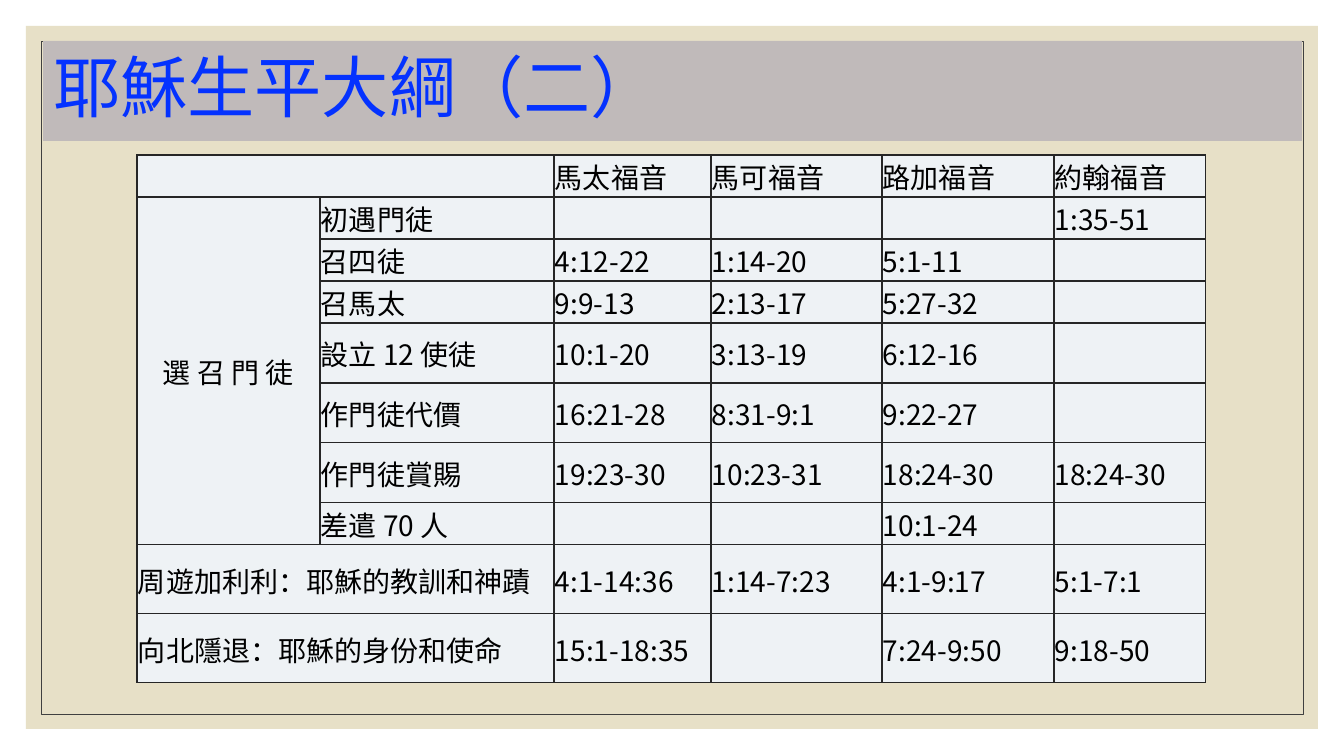
from lxml import etree
from pptx import Presentation
from pptx import util as u
from pptx.dml.color import RGBColor
from pptx.enum import shapes, text
from pptx.oxml import ns

PX = 914400 / 100.8
FONT = "Noto Sans CJK SC"
SAND = RGBColor(0xE7, 0xE0, 0xC7)
FRAME = RGBColor(0x40, 0x40, 0x40)
BAND = RGBColor(0xC0, 0xBA, 0xBA)
BLUE = RGBColor(0x04, 0x32, 0xFF)
CELL = RGBColor(0xEE, 0xF2, 0xF5)
GRID = RGBColor(0x26, 0x26, 0x26)
BLACK = RGBColor(0, 0, 0)

COLUMNS = [183, 234, 157, 171, 172, 152]
ROWS = [42] * 4 + [60] * 3 + [42] + [69] * 2
OUTLINE = [
    ["", "", "馬太福音", "馬可福音", "路加福音", "約翰福音"],
    ["選 召 門 徒", "初遇門徒", "", "", "", "1:35-51"],
    ["", "召四徒", "4:12-22", "1:14-20", "5:1-11", ""],
    ["", "召馬太", "9:9-13", "2:13-17", "5:27-32", ""],
    ["", "設立 12 使徒", "10:1-20", "3:13-19", "6:12-16", ""],
    ["", "作門徒代價", "16:21-28", "8:31-9:1", "9:22-27", ""],
    ["", "作門徒賞賜", "19:23-30", "10:23-31", "18:24-30", "18:24-30"],
    ["", "差遣 70 人", "", "", "10:1-24", ""],
    ["周遊加利利：耶穌的教訓和神蹟", "", "4:1-14:36", "1:14-7:23", "4:1-9:17", "5:1-7:1"],
    ["向北隱退：耶穌的身份和使命", "", "15:1-18:35", "", "7:24-9:50", "9:18-50"],
]
# First cell and last cell of each merged block
MERGES = [((0, 0), (0, 1)), ((1, 0), (7, 0)), ((8, 0), (8, 1)), ((9, 0), (9, 1))]


def px(length):
    return u.Emu(round(length * PX))


def set_font(paragraph, size, color):
    font = paragraph.font
    font.name = FONT
    font.size = u.Pt(size)
    font.bold = False
    font.color.rgb = color
    # East Asian glyphs take their own typeface entry
    defaults = paragraph._p.pPr.find(ns.qn("a:defRPr"))
    etree.SubElement(defaults, ns.qn("a:ea"), typeface=FONT)


def add_rectangle(slide, box):
    shape = slide.shapes.add_shape(shapes.MSO_SHAPE.RECTANGLE, *map(px, box))
    shape.shadow.inherit = False
    return shape


def add_backdrop(slide, box):
    left, top, width, height = box
    panel = add_rectangle(slide, box)
    panel.fill.solid()
    panel.fill.fore_color.rgb = SAND
    panel.line.fill.background()
    frame = add_rectangle(slide, (left + 15, top + 15, width - 30, height - 30))
    frame.fill.background()
    frame.line.color.rgb = FRAME
    frame.line.width = u.Pt(0.5)


def add_title(slide, box, words):
    title = slide.shapes.title
    title.left, title.top, title.width, title.height = map(px, box)
    title.fill.solid()
    title.fill.fore_color.rgb = BAND
    frame = title.text_frame
    frame.text = words
    frame.word_wrap = True
    frame.auto_size = text.MSO_AUTO_SIZE.NONE
    frame.vertical_anchor = text.MSO_ANCHOR.MIDDLE
    paragraph = frame.paragraphs[0]
    paragraph.alignment = text.PP_ALIGN.LEFT
    paragraph.line_spacing = 0.9
    set_font(paragraph, 48, BLUE)
    # Bring the title in front of the backdrop
    slide.shapes._spTree.append(title._element)


def add_borders(cell):
    properties = cell._tc.get_or_add_tcPr()
    for side in ("lnL", "lnR", "lnT", "lnB"):
        line = etree.SubElement(properties, ns.qn("a:" + side), w=str(u.Pt(1)))
        fill = etree.SubElement(line, ns.qn("a:solidFill"))
        etree.SubElement(fill, ns.qn("a:srgbClr"), val=str(GRID))


def format_cell(cell, words):
    add_borders(cell)
    cell.fill.solid()
    cell.fill.fore_color.rgb = CELL
    cell.margin_left = cell.margin_right = cell.margin_top = px(1)
    cell.margin_bottom = 0
    cell.vertical_anchor = text.MSO_ANCHOR.MIDDLE
    cell.text = words
    set_font(cell.text_frame.paragraphs[0], 20, BLACK)


def add_outline_table(slide, left, top):
    box = (left, top, sum(COLUMNS), sum(ROWS))
    table = slide.shapes.add_table(len(ROWS), len(COLUMNS), *map(px, box)).table
    table.first_row = table.horz_banding = False
    for column, width in zip(table.columns, COLUMNS):
        column.width = px(width)
    for row, height, entries in zip(table.rows, ROWS, OUTLINE):
        row.height = px(height)
        for cell, words in zip(row.cells, entries):
            format_cell(cell, words)
    for first, last in MERGES:
        table.cell(*first).merge(table.cell(*last))
    table.cell(1, 0).text_frame.paragraphs[0].alignment = text.PP_ALIGN.CENTER


def main():
    presentation = Presentation()
    presentation.slide_width = px(1344)
    presentation.slide_height = px(756)
    slide = presentation.slides.add_slide(presentation.slide_layouts[5])
    add_backdrop(slide, (26, 26, 1292, 703))
    add_title(slide, (43, 41, 1259, 100), "耶穌生平大綱（二）")
    add_outline_table(slide, 137, 155)
    presentation.save("out.pptx")


if __name__ == "__main__":
    main()
